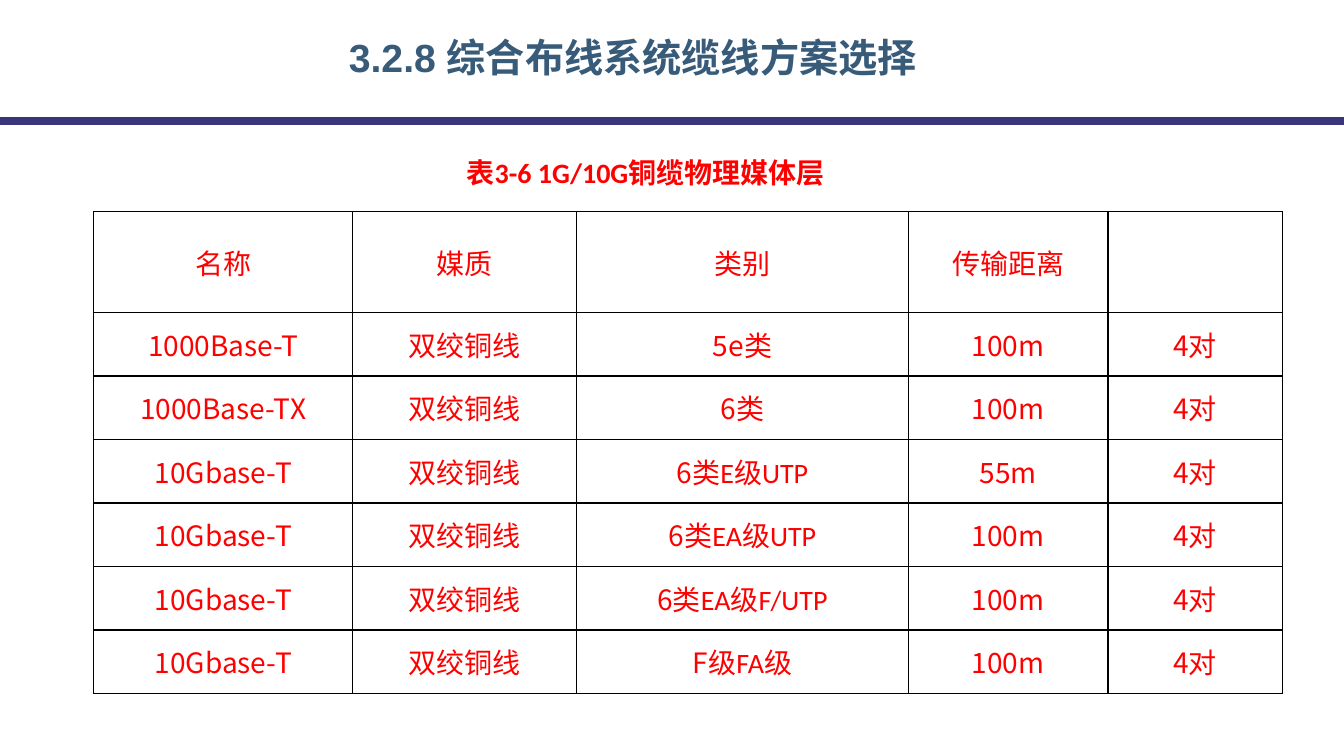
from dataclasses import dataclass
from itertools import takewhile

from lxml.etree import SubElement
from pptx import Presentation
from pptx.dml.color import RGBColor as RGB
from pptx.enum.shapes import MSO_CONNECTOR as CONN
from pptx.enum.text import MSO_ANCHOR as ANCHOR, PP_ALIGN as ALIGN
from pptx.oxml.ns import qn
from pptx.util import Inches, Pt


@dataclass(frozen=True)
class Theme:
    """Colours, fonts and sizes of the slide."""
    title: RGB = RGB(0x37, 0x5B, 0x79)
    rule: RGB = RGB(0x3A, 0x35, 0x7B)
    red: RGB = RGB(0xFF, 0, 0)
    border: str = "000000"
    title_font: str = "Arial"
    body_font: str = "Calibri"
    code_font: str = "Noto Sans CJK SC"
    title_size: Pt = Pt(28)
    body_size: Pt = Pt(20)
    rule_width: Pt = Pt(5.75)
    border_width: Pt = Pt(1)


THEME = Theme()
HEADER = ["名称", "媒质", "类别", "传输距离", ""]
CABLES = [
    ("1000Base-T", "5e类", "100m"),
    ("1000Base-TX", "6类", "100m"),
    ("10Gbase-T", "6类E级UTP", "55m"),
    ("10Gbase-T", "6类EA级UTP", "100m"),
    ("10Gbase-T", "6类EA级F/UTP", "100m"),
    ("10Gbase-T", "F级FA级", "100m"),
]
COL_WIDTHS = [2.57, 2.22, 3.29, 1.98, 1.73]
HEADER_HEIGHT, ROW_HEIGHT = 1, 0.63


def style(p, size, color, bold=False, name=None):
    """Set the font of a whole paragraph."""
    p.font.size, p.font.bold, p.font.color.rgb = size, bold, color
    if name:
        p.font.name = name


def add_title(s, text):
    """Place and format the title placeholder."""
    sp = s.shapes.title
    sp.left, sp.top, sp.width, sp.height = map(Inches, (3.36, 0.28, 7.72, 0.63))
    tf = sp.text_frame
    tf.text, tf.vertical_anchor = text, ANCHOR.TOP
    p = tf.paragraphs[0]
    p.alignment = ALIGN.LEFT
    style(p, THEME.title_size, THEME.title, True, THEME.title_font)


def add_rule(s, y, width):
    """Draw the line under the title across the slide."""
    line = s.shapes.add_connector(CONN.STRAIGHT, 0, y, width, y)
    line.line.color.rgb, line.line.width = THEME.rule, THEME.rule_width
    SubElement(line._element.spPr, qn("a:effectLst"))


def add_caption(s, text):
    """Add the centred caption above the table."""
    sp = s.shapes.add_textbox(*map(Inches, (2.89, 1.49, 7.03, 0.44)))
    tf = sp.text_frame
    tf.word_wrap, tf.vertical_anchor = True, ANCHOR.MIDDLE
    p = tf.paragraphs[0]
    p.text, p.alignment = text, ALIGN.CENTER
    style(p, THEME.body_size, THEME.red, True, THEME.body_font)


def add_borders(cell):
    """Outline a cell on all four sides."""
    tc_pr = cell._tc.get_or_add_tcPr()
    for side in ("a:lnL", "a:lnR", "a:lnT", "a:lnB"):
        ln = SubElement(tc_pr, qn(side), w=str(THEME.border_width))
        fill = SubElement(ln, qn("a:solidFill"))
        SubElement(fill, qn("a:srgbClr"), val=THEME.border)


def fill_cell(cell, text):
    """Format a cell and set its leading Latin part in the code font."""
    cell.margin_left = cell.margin_right = Inches(0.07)
    cell.margin_top = cell.margin_bottom = 0
    cell.vertical_anchor = ANCHOR.MIDDLE
    add_borders(cell)
    cell.fill.background()
    p = cell.text_frame.paragraphs[0]
    p.alignment = ALIGN.CENTER
    style(p, THEME.body_size, THEME.red)
    code = "".join(takewhile(str.isascii, text))
    for part, font in ((code, THEME.code_font), (text[len(code):], THEME.body_font)):
        if part:
            r = p.add_run()
            r.text, r.font.name = part, font


def add_cable_table(s):
    """Add the table of copper cable media."""
    rows = [HEADER] + [[name, "双绞铜线", kind, reach, "4对"] for name, kind, reach in CABLES]
    heights = [HEADER_HEIGHT] + [ROW_HEIGHT] * len(CABLES)
    size = map(Inches, (0.93, 2.1, sum(COL_WIDTHS), sum(heights)))
    table = s.shapes.add_table(len(rows), len(HEADER), *size).table
    table.first_row = table.horz_banding = False
    for col, width in zip(table.columns, COL_WIDTHS):
        col.width = Inches(width)
    for row, height, texts in zip(table.rows, heights, rows):
        row.height = Inches(height)
        for cell, text in zip(row.cells, texts):
            fill_cell(cell, text)


def main():
    """Build and save the slide."""
    prs = Presentation()
    prs.slide_width, prs.slide_height = Inches(13.33), Inches(7.5)
    s = prs.slides.add_slide(prs.slide_layouts[5])
    add_rule(s, Inches(1.2), prs.slide_width)
    add_cable_table(s)
    add_caption(s, "表3-6 1G/10G铜缆物理媒体层")
    add_title(s, "3.2.8 综合布线系统缆线方案选择")
    prs.save("out.pptx")


if __name__ == "__main__":
    main()
